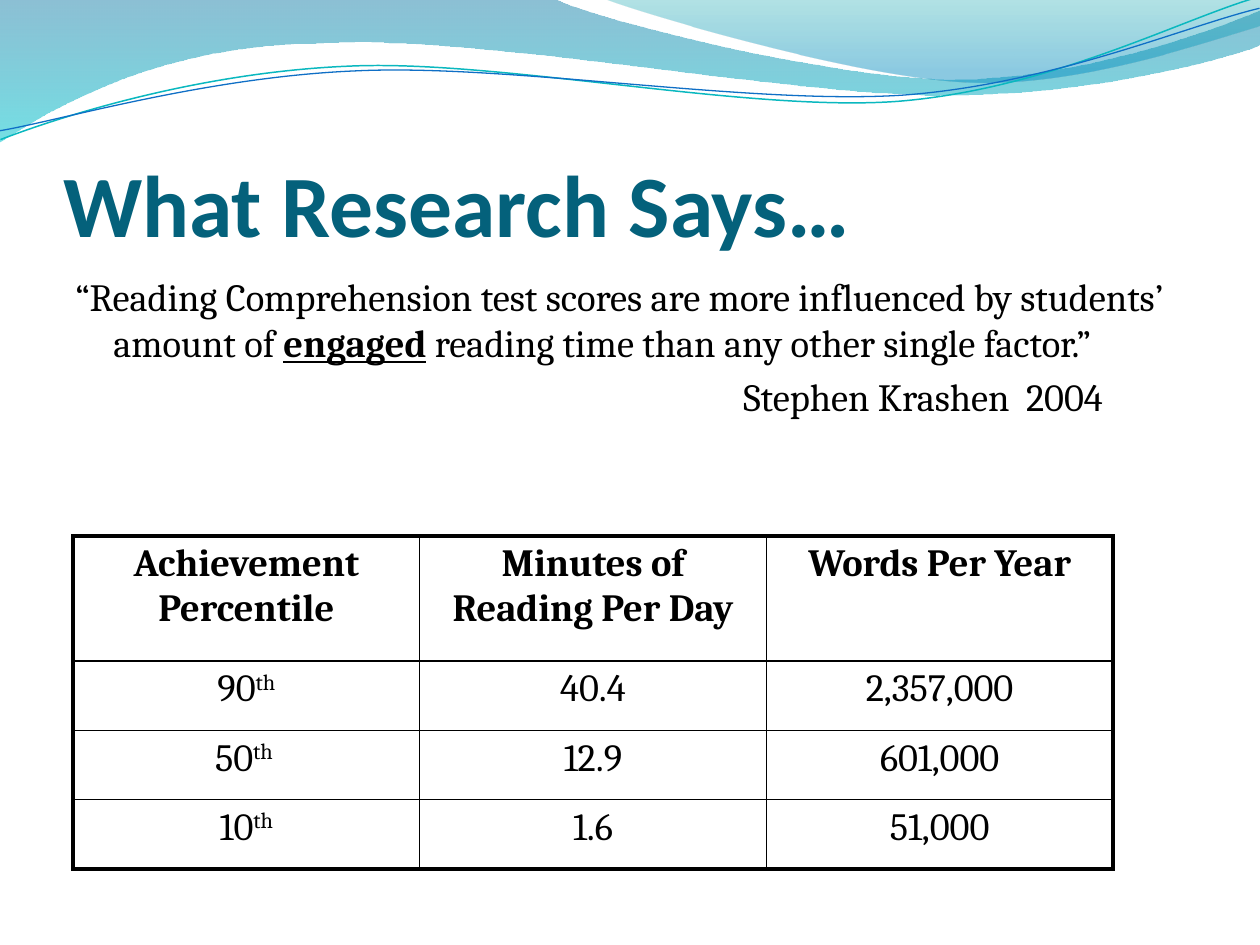
"""Build the reading research slide with its wave header, quotation and table."""
from dataclasses import dataclass

from lxml import etree
from pptx import Presentation, util as u
from pptx.dml.color import RGBColor
from pptx.enum import text
from pptx.oxml.ns import qn


@dataclass(frozen=True)
class Theme:
    heading_font: str = "Calibri"
    body_font: str = "Cambria"
    heading: str = "04617B"
    ink: str = "000000"
    heading_size: int = 50
    body_size: int = 22
    space_before: float = 4.4
    wide_spacing: float = 4.6
    outer_border: float = 2.25
    inner_border: float = 1
    upper_wave: tuple = ((0, "0074A1", 45), (1, "00C6CF", 55))
    lower_wave: tuple = ((0, "00A1A9", 30), (0.8, "008BBF", 45))
    teal_line: tuple = ("0AB8BF", 0.85)
    blue_line: tuple = ("0F6FC6", 0.75)


THEME = Theme()
SLIDE_SIZE = (1260, 945)
TITLE = "What Research Says…"
TITLE_BOX = (63, 97, 1134, 158)
QUOTE_BOX = (63, 267, 1134, 268)
QUOTE = [
    (38, -38, [
        ("“Reading Comprehension test scores are more influenced by students’ amount of ", ""),
        ("engaged", "bold underline"),
        (" reading time than any other single factor.”", ""),
    ]),
    (668, 0, [("Stephen Krashen", ""), (" ", "wide"), ("2004", "")]),
]

TABLE_BOX = (73, 536, 1040, 333)
HEADER_HEIGHT = 125
HEADINGS = ["Achievement Percentile", "Minutes of Reading Per Day", "Words Per Year"]
READERS = [
    (("90", "th"), "40.4", "2,357,000"),
    (("50", "th "), "12.9", "601,000"),
    (("10", "th"), "1.6", "51,000"),
]

WAVES = [
    (THEME.upper_wave, [
        [(0, -1)], [(554, -1)],
        [(600, 21), (837, 79), (955, 79)], [(1075, 79), (1207, 33), (1260, 11)],
        [(1261, 45)],
        [(1239, 55), (1096, 96), (940, 95)], [(784, 95), (481, 35), (324, 43)],
        [(161, 44), (58, 105), (-1, 142)],
    ]),
    (THEME.lower_wave, [
        [(604, -1)],
        [(641, 14), (859, 78), (969, 82)], [(1079, 87), (1211, 40), (1260, 26)],
        [(1260, 0)],
    ]),
]
SWOOSH_ROTATION = 357.3
SWOOSHES = [
    (THEME.teal_line, [
        [(-2, 110)], [(58, 90), (199, 52), (350, 53)],
        [(499, 53), (745, 118), (896, 114)], [(1049, 109), (1184, 45), (1260, 27)],
    ]),
    (THEME.blue_line, [
        [(-2, 101)], [(57, 94), (207, 57), (357, 58)],
        [(509, 58), (750, 111), (902, 108)], [(1052, 104), (1188, 52), (1262, 38)],
    ]),
]


def px(length):
    return round(length * u.Inches(1) / 126)


def add_run(paragraph, wording, style="", font=THEME.body_font,
            size=THEME.body_size, color=THEME.ink):
    run = paragraph.add_run()
    run.text = wording
    run.font.name, run.font.size = font, u.Pt(size)
    run.font.color.rgb = RGBColor.from_string(color)
    run.font.bold = "bold" in style
    run.font.underline = "underline" in style
    if "wide" in style:
        run.font._element.set("spc", str(round(THEME.wide_spacing * 100)))
    if "raised" in style:
        run.font._element.set("baseline", "30000")


def add_outline(slide, segments, close):
    start, *rest = [(px(x), px(y)) for segment in segments for x, y in segment]
    builder = slide.shapes.build_freeform(*start)
    builder.add_line_segments(rest, close=close)
    outline = builder.convert_to_shape()
    outline.shadow.inherit = False
    steps = iter(list(outline._element.spPr.iter(qn("a:lnTo"))))
    for segment in segments[1:]:
        first, *others = [next(steps) for _ in segment]
        if others:
            curve = etree.Element(qn("a:cubicBezTo"))
            first.addprevious(curve)
            for step in (first, *others):
                curve.append(step[0])
                step.getparent().remove(step)
    return outline


def add_wave(slide, stops, segments):
    wave = add_outline(slide, segments, True)
    wave.line.fill.background()
    wave.fill.gradient()
    wave.fill.gradient_angle = 270
    for stop, (position, color, _) in zip(wave.fill.gradient_stops, stops):
        stop.position = position
        stop.color.rgb = RGBColor.from_string(color)
    for node, (_, _, opacity) in zip(wave._element.spPr.iter(qn("a:srgbClr")), stops):
        etree.SubElement(node, qn("a:alpha"), val=str(opacity * 1000))


def add_swoosh(slide, stroke, segments):
    swoosh = add_outline(slide, segments, False)
    color, width = stroke
    swoosh.rotation = SWOOSH_ROTATION
    swoosh.fill.background()
    swoosh.line.color.rgb = RGBColor.from_string(color)
    swoosh.line.width = u.Pt(width)


def add_title(slide):
    title = slide.shapes.title
    title.left, title.top, title.width, title.height = map(px, TITLE_BOX)
    frame = title.text_frame
    frame.auto_size = text.MSO_AUTO_SIZE.NONE
    frame.word_wrap = True
    frame.vertical_anchor = text.MSO_ANCHOR.BOTTOM
    frame.margin_left = frame.margin_right = frame.margin_bottom = 0
    heading = frame.paragraphs[0]
    heading.alignment = text.PP_ALIGN.LEFT
    add_run(heading, TITLE, "bold", THEME.heading_font, THEME.heading_size, THEME.heading)


def add_quote(slide):
    frame = slide.shapes.add_textbox(*map(px, QUOTE_BOX)).text_frame
    frame.word_wrap = True
    for index, (margin, indent, runs) in enumerate(QUOTE):
        paragraph = frame.add_paragraph() if index else frame.paragraphs[0]
        properties = paragraph._p.get_or_add_pPr()
        properties.set("marL", str(px(margin)))
        properties.set("indent", str(px(indent)))
        if index:
            paragraph.space_before = u.Pt(THEME.space_before)
        for wording, style in runs:
            add_run(paragraph, wording, style)


def add_borders(cell, outer_sides):
    properties = cell._tc.get_or_add_tcPr()
    for index, (side, is_outer) in enumerate(zip("LRTB", outer_sides)):
        width = THEME.outer_border if is_outer else THEME.inner_border
        border = etree.Element(qn(f"a:ln{side}"), w=str(u.Pt(width)))
        fill = etree.SubElement(border, qn("a:solidFill"))
        etree.SubElement(fill, qn("a:srgbClr"), val=THEME.ink)
        properties.insert(index, border)


def add_reading_table(slide):
    rows = [HEADINGS, *READERS]
    row_height = (TABLE_BOX[3] - HEADER_HEIGHT) / len(READERS)
    table = slide.shapes.add_table(len(rows), len(HEADINGS), *map(px, TABLE_BOX)).table
    table.first_row = table.horz_banding = False
    last_row, last_column = len(rows) - 1, len(HEADINGS) - 1
    for r, row in enumerate(rows):
        table.rows[r].height = px(row_height if r else HEADER_HEIGHT)
        for c, content in enumerate(row):
            cell = table.cell(r, c)
            cell.fill.background()
            add_borders(cell, (c == 0, c == last_column, r == 0, r == last_row))
            paragraph = cell.text_frame.paragraphs[0]
            paragraph.alignment = text.PP_ALIGN.CENTER
            wording, *ordinal = content if isinstance(content, tuple) else (content,)
            add_run(paragraph, wording, "" if r else "bold")
            for suffix in ordinal:
                add_run(paragraph, suffix, "raised")


def main():
    deck = Presentation()
    deck.slide_width, deck.slide_height = map(px, SLIDE_SIZE)
    slide = deck.slides.add_slide(deck.slide_layouts[5])
    for stops, segments in WAVES:
        add_wave(slide, stops, segments)
    for stroke, segments in SWOOSHES:
        add_swoosh(slide, stroke, segments)
    add_title(slide)
    add_quote(slide)
    add_reading_table(slide)
    deck.save("out.pptx")


if __name__ == "__main__":
    main()
